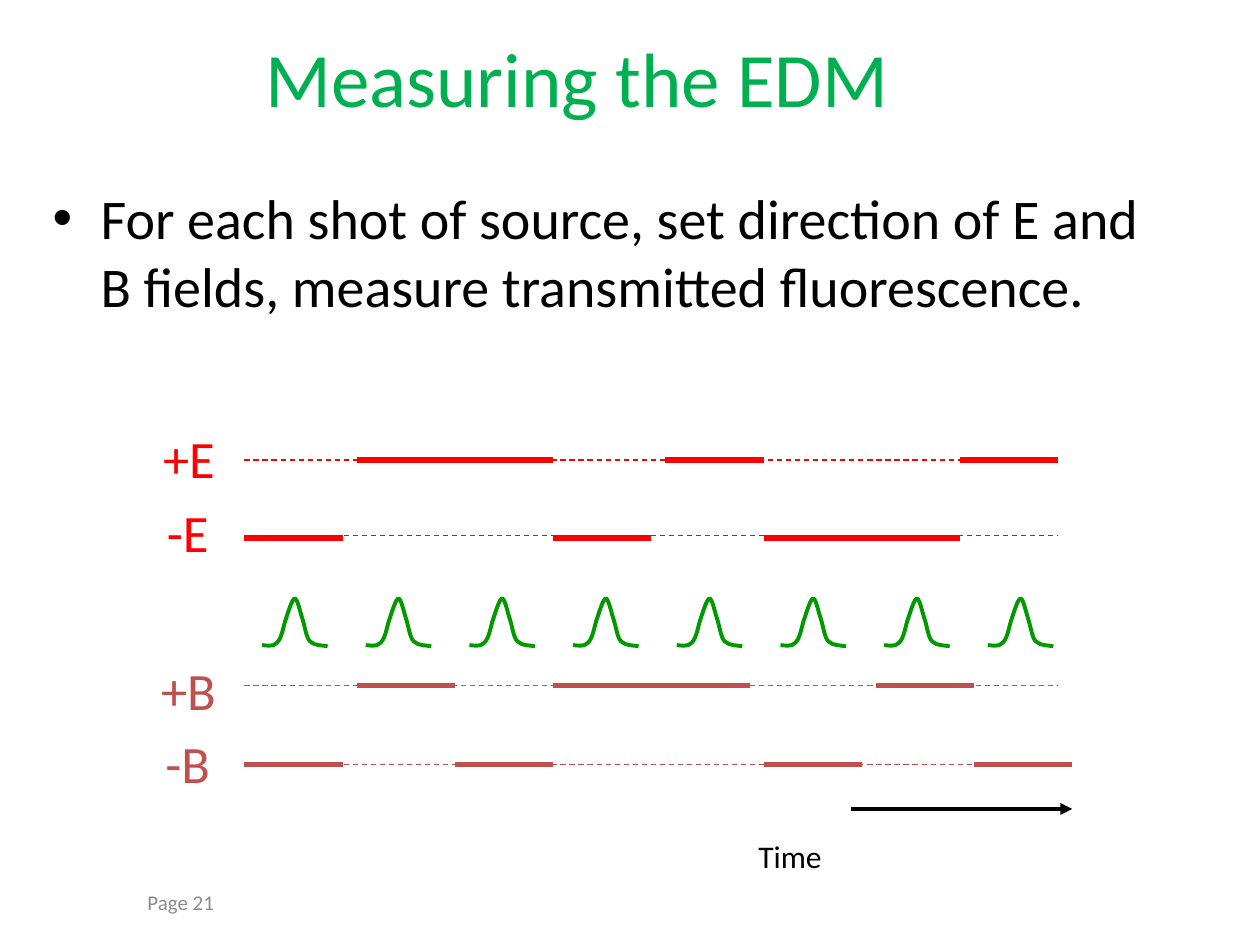
from lxml import etree
from pptx import Presentation
from pptx.dml.color import RGBColor
from pptx.enum.dml import MSO_LINE
from pptx.enum.shapes import MSO_CONNECTOR
from pptx.enum.text import MSO_ANCHOR, MSO_AUTO_SIZE, PP_ALIGN
from pptx.oxml.ns import qn
from pptx.util import Inches, Pt

COLORS = {
    "title": "00B050",
    "text": "000000",
    "page": "8C8C8C",
    "E": "FF0000",
    "B": "C0504D",
    "pulse": "009900",
}
SHOT = 0.78
START = (0, 0.37)
CURVES = [
    ((0.02, 0.37), (0.09, 0.39), (0.12, 0.35)),
    ((0.16, 0.31), (0.17, 0.21), (0.19, 0.16)),
    ((0.21, 0.1), (0.24, 0), (0.26, 0)),
    ((0.28, 0), (0.3, 0.1), (0.32, 0.16)),
    ((0.34, 0.22), (0.35, 0.31), (0.38, 0.34)),
    ((0.42, 0.38), (0.49, 0.37), (0.52, 0.38)),
]


def rgb(name):
    return RGBColor.from_string(COLORS[name])


def place(shape, box):
    shape.left, shape.top, shape.width, shape.height = map(Inches, box)


def write(shape, words, size=18, color="text", align=PP_ALIGN.LEFT,
          anchor=MSO_ANCHOR.TOP, wrap=True, bullet=False):
    frame = shape.text_frame
    frame.word_wrap = wrap
    frame.auto_size = MSO_AUTO_SIZE.NONE if wrap else MSO_AUTO_SIZE.SHAPE_TO_FIT_TEXT
    frame.vertical_anchor = anchor
    para = frame.paragraphs[0]
    para.alignment = align
    run = para.add_run()
    run.text = words
    run.font.name = "Calibri"
    run.font.size = Pt(size)
    run.font.color.rgb = rgb(color)
    if bullet:
        para.space_before = Pt(size * 0.2)
        props = para._p.get_or_add_pPr()
        props.set("marL", str(Inches(0.38)))
        props.set("indent", str(-Inches(0.38)))
        etree.SubElement(props, qn("a:buFont")).set("typeface", "Arial")
        etree.SubElement(props, qn("a:buChar")).set("char", "•")


def label(slide, words, box, **style):
    write(slide.shapes.add_textbox(*map(Inches, box)), words, **style)


def rule(slide, left, right, y, color, width, dash=False, arrow=False):
    line = slide.shapes.add_connector(
        MSO_CONNECTOR.STRAIGHT, Inches(left), Inches(y), Inches(right), Inches(y))
    line.line.color.rgb = rgb(color)
    line.line.width = Pt(width)
    if dash:
        line.line.dash_style = MSO_LINE.DASH
    if arrow:
        etree.SubElement(line.line._get_or_add_ln(), qn("a:tailEnd")).set("type", "triangle")
    etree.SubElement(line._element.spPr, qn("a:effectLst"))


def heading(slide, box):
    title = slide.shapes.title
    place(title, box)
    write(title, "Measuring the EDM", size=44, color="title", align=PP_ALIGN.CENTER)


def field(slide, box, name, starts, signs, base, names):
    left, top, width, height = box
    levels = {"+": top, "-": top + height}
    for start, sign in zip(starts, signs):
        rule(slide, start, start + SHOT, levels[sign], name, 3)
    for y in (top, top + base):
        rule(slide, left, left + width, y, name, 0.75, dash=True)
    for sign, spot in zip("+-", names):
        label(slide, sign + name, spot, size=30, color=name, align=PP_ALIGN.CENTER)


def bend(shape):
    lines = list(shape._element.iter(qn("a:lnTo")))
    for line, curve in zip(lines, CURVES):
        cubic = etree.Element(qn("a:cubicBezTo"))
        for x, y in curve:
            point = etree.SubElement(cubic, qn("a:pt"))
            point.set("x", str(Inches(x)))
            point.set("y", str(Inches(y)))
        line.getparent().replace(line, cubic)


def pulses(slide, box, count=8):
    left, top, width, _ = box
    ends = [START] + [curve[-1] for curve in CURVES]
    gap = (width - ends[-1][0]) / (count - 1)
    for index in range(count):
        first, *rest = [(Inches(left + index * gap + x), Inches(top + y)) for x, y in ends]
        draft = slide.shapes.build_freeform(*first)
        draft.add_line_segments(rest, close=False)
        pulse = draft.convert_to_shape()
        bend(pulse)
        pulse.shadow.inherit = False
        pulse.fill.background()
        pulse.line.color.rgb = rgb("pulse")
        pulse.line.width = Pt(2.25)


def clock(slide, box):
    left, top, width, height = box
    rule(slide, left + 0.83, left + width, top, "text", 2.25, arrow=True)
    label(slide, "Time", (left, top + 0.17, 0.76, height - 0.17), wrap=False)


def main():
    deck = Presentation()
    deck.slide_width, deck.slide_height = Inches(10), Inches(7.5)
    slide = deck.slides.add_slide(deck.slide_layouts[5])
    heading(slide, (0.33, 0.19, 8.5, 1.25))
    label(slide, "Page 21", (0.27, 6.9, 2.33, 0.52), size=12, color="page",
          align=PP_ALIGN.CENTER, anchor=MSO_ANCHOR.MIDDLE)
    label(slide, "For each shot of source, set direction of E and B fields, "
          "measure transmitted fluorescence.", (0.32, 1.41, 9.1, 1.62),
          size=32, bullet=True)
    field(slide, (1.94, 3.65, 6.45, 0.62), "E",
          (1.94, 2.83, 3.61, 4.39, 5.28, 6.06, 6.84, 7.62), "-++-+--+", 0.6,
          ((1.08, 3.33, 0.84, 0.59), (1.17, 3.92, 0.64, 0.55)))
    field(slide, (1.94, 5.44, 6.45, 0.63), "B",
          (1.94, 2.83, 3.61, 4.39, 5.17, 6.06, 6.95, 7.73), "-+-++-+-", 0.63,
          ((1.12, 5.17, 0.75, 0.59), (1.17, 5.75, 0.64, 0.5)))
    pulses(slide, (2.08, 4.75, 6.28, 0.38))
    clock(slide, (5.92, 6.42, 2.59, 0.57))
    deck.save("out.pptx")


if __name__ == "__main__":
    main()
